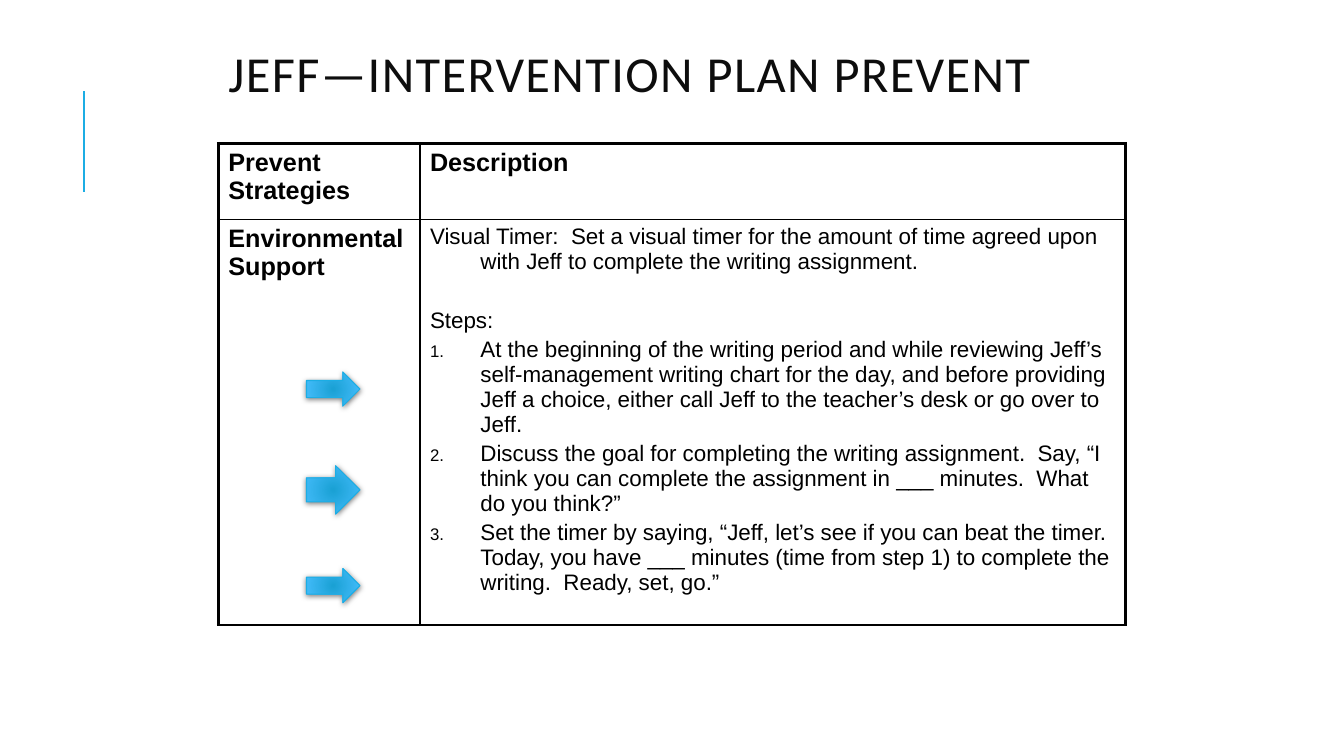
from lxml import etree
from pptx import Presentation, util as u
from pptx.dml.color import RGBColor
from pptx.enum import shapes, text
from pptx.oxml import parse_xml
from pptx.oxml.ns import nsdecls, qn

BLACK = RGBColor(0x00, 0x00, 0x00)
TITLE_INK = RGBColor(0x0D, 0x0D, 0x0D)
ACCENT = RGBColor(0x1C, 0xAD, 0xE4)
ARROW_CENTRE = RGBColor(0x1A, 0xA1, 0xD4)
ARROW_EDGE = RGBColor(0x48, 0xBF, 0xFF)

presentation = Presentation()
presentation.slide_width = u.Inches(13.33)
presentation.slide_height = u.Inches(7.5)
slide = presentation.slides.add_slide(presentation.slide_layouts[5])

COLUMN = u.Inches(1)
LEFT = (presentation.slide_width - 9 * COLUMN) // 2
TABLE_TOP = u.Inches(1.42)
COLUMN_WIDTHS = [2 * COLUMN, 7 * COLUMN]
ROW_HEIGHTS = [u.Inches(0.76), u.Inches(4.02)]


def add_run(paragraph, words, font, size, color, bold=False):
    run = paragraph.add_run()
    run.text = words
    run.font.name = font
    run.font.size = u.Pt(size)
    run.font.color.rgb = color
    run.font.bold = bold
    return run


def add_border(properties, position, side, points):
    properties.insert(position, parse_xml(
        f'<a:ln{side} {nsdecls("a")} w="{u.Pt(points)}"><a:solidFill>'
        f'<a:srgbClr val="{BLACK}"/></a:solidFill></a:ln{side}>'))


accent_line = slide.shapes.add_connector(
    shapes.MSO_CONNECTOR.STRAIGHT,
    u.Inches(0.83), u.Inches(1.9), u.Inches(0.83), u.Inches(0.9))
accent_line.line.color.rgb = ACCENT
accent_line.line.width = u.Pt(1.5)
etree.SubElement(accent_line._element.spPr, qn("a:effectLst"))

title = slide.shapes.title
title.left, title.top = LEFT, u.Inches(0.3)
title.width, title.height = 9 * COLUMN, u.Inches(0.95)
title.text_frame.auto_size = text.MSO_AUTO_SIZE.NONE
title.text_frame.vertical_anchor = text.MSO_ANCHOR.MIDDLE
paragraph = title.text_frame.paragraphs[0]
paragraph.alignment = text.PP_ALIGN.LEFT
paragraph.line_spacing = 0.8
run = add_run(paragraph, "JEFF—INTERVENTION PLAN PREVENT", "Calibri", 36, TITLE_INK)
run.font._element.set("spc", "100")

table = slide.shapes.add_table(
    2, 2, LEFT, TABLE_TOP, sum(COLUMN_WIDTHS), sum(ROW_HEIGHTS)).table
table.first_row = False
table.horz_banding = False
for column, width in zip(table.columns, COLUMN_WIDTHS):
    column.width = width
for row, height in zip(table.rows, ROW_HEIGHTS):
    row.height = height

for row in range(2):
    for column in range(2):
        cell = table.cell(row, column)
        cell.fill.background()
        outer_edges = [("L", column == 0), ("R", column == 1), ("T", row == 0), ("B", row == 1)]
        for position, (side, outer) in enumerate(outer_edges):
            add_border(cell._tc.tcPr, position, side, 2.25 if outer else 1)

headings = [
    (0, 0, "Prevent Strategies"),
    (0, 1, "Description"),
    (1, 0, "Environmental Support"),
]
for row, column, words in headings:
    paragraph = table.cell(row, column).text_frame.paragraphs[0]
    add_run(paragraph, words, "Arial", 18, BLACK, bold=True)

description = [
    (0, False, "Visual Timer:  Set a visual timer for the amount of time agreed upon "
               "with Jeff to complete the writing assignment."),
    (24, False, "Steps:"),
    (3.2, True, "At the beginning of the writing period and while reviewing Jeff’s "
                "self-management writing chart for the day, and before providing Jeff a choice, "
                "either call Jeff to the teacher’s desk or go over to Jeff."),
    (3.2, True, "Discuss the goal for completing the writing assignment.  Say, “I think you can "
                "complete the assignment in ___ minutes.  What do you think?”"),
    (3.2, True, "Set the timer by saying, “Jeff, let’s see if you can beat the timer.  Today, "
                "you have ___ minutes (time from step 1) to complete the writing.  "
                "Ready, set, go.”"),
]
frame = table.cell(1, 1).text_frame
for index, (space, numbered, words) in enumerate(description):
    paragraph = frame.add_paragraph() if index else frame.paragraphs[0]
    paragraph.space_before = u.Pt(space)
    properties = paragraph._p.get_or_add_pPr()
    properties.set("marL", str(u.Inches(0.5)))
    properties.set("indent", str(-u.Inches(0.5)))
    if numbered:
        color = etree.SubElement(properties, qn("a:buClr"))
        etree.SubElement(color, qn("a:srgbClr"), val=str(BLACK))
        etree.SubElement(properties, qn("a:buSzPct"), val="75000")
        etree.SubElement(properties, qn("a:buFont"), typeface="Arial")
        etree.SubElement(properties, qn("a:buAutoNum"), type="arabicPeriod")
    add_run(paragraph, words, "Arial", 16, BLACK)

for top, height in [(3.69, 0.34), (4.62, 0.48), (5.64, 0.34)]:
    arrow = slide.shapes.add_shape(
        shapes.MSO_SHAPE.RIGHT_ARROW,
        u.Inches(3.04), u.Inches(top), u.Inches(0.53), u.Inches(height))
    arrow.fill.gradient()
    for stop, position, color in zip(
            arrow.fill.gradient_stops, (0, 1), (ARROW_CENTRE, ARROW_EDGE)):
        stop.position = position
        stop.color.rgb = color
    arrow.line.color.rgb = ACCENT
    arrow.line.width = u.Pt(0.75)
    linear = arrow._element.spPr.find(".//" + qn("a:lin"))
    linear.getparent().replace(linear, parse_xml(
        f'<a:path {nsdecls("a")} path="circle">'
        '<a:fillToRect l="100000" t="100000" r="100000" b="100000"/></a:path>'))
    arrow._element.spPr.append(parse_xml(
        f'<a:effectLst {nsdecls("a")}><a:outerShdw blurRad="{u.Pt(4)}" dist="{u.Pt(1)}" '
        f'dir="5400000" rotWithShape="0"><a:srgbClr val="{BLACK}"><a:alpha val="50000"/>'
        '</a:srgbClr></a:outerShdw></a:effectLst>'))

presentation.save("out.pptx")
